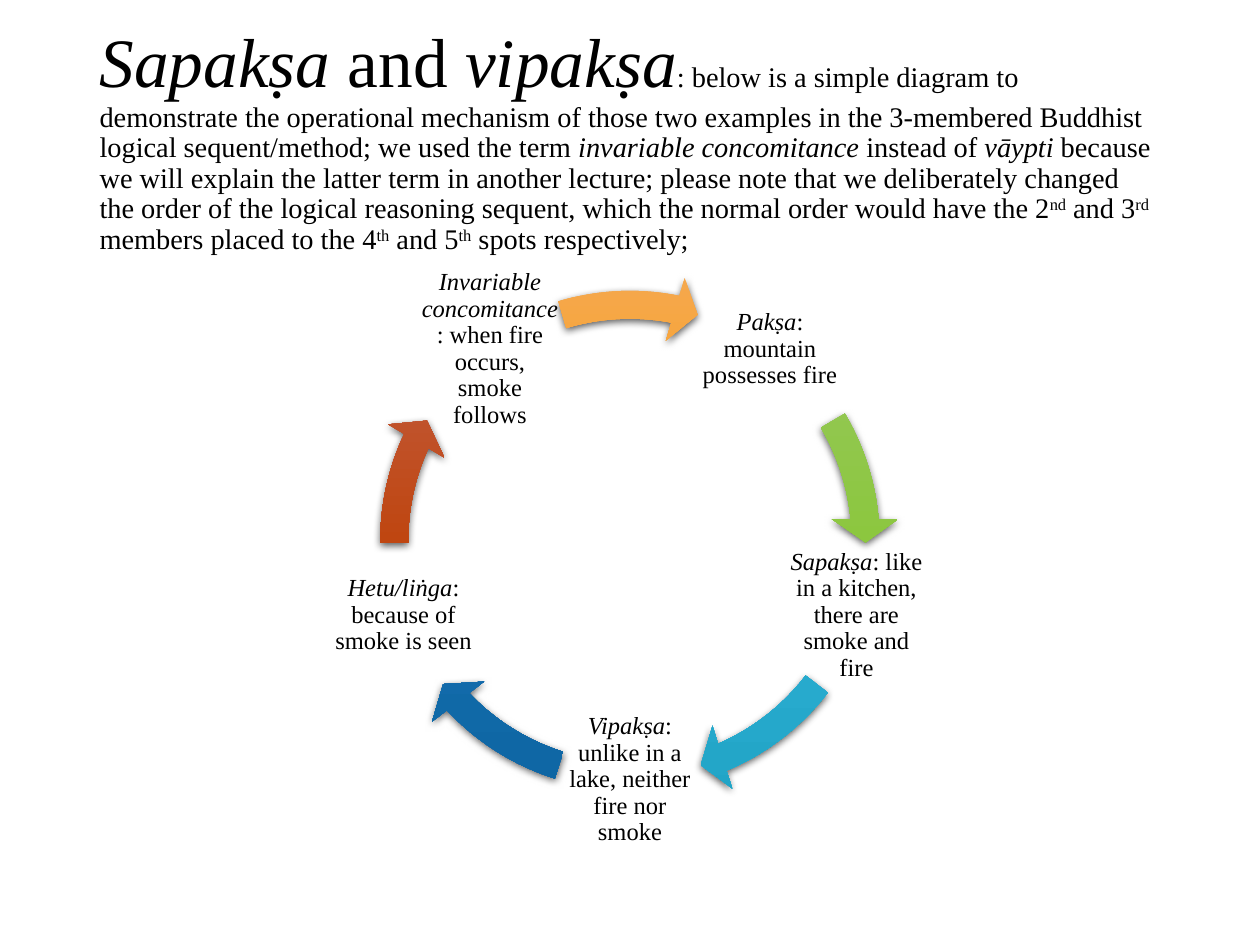
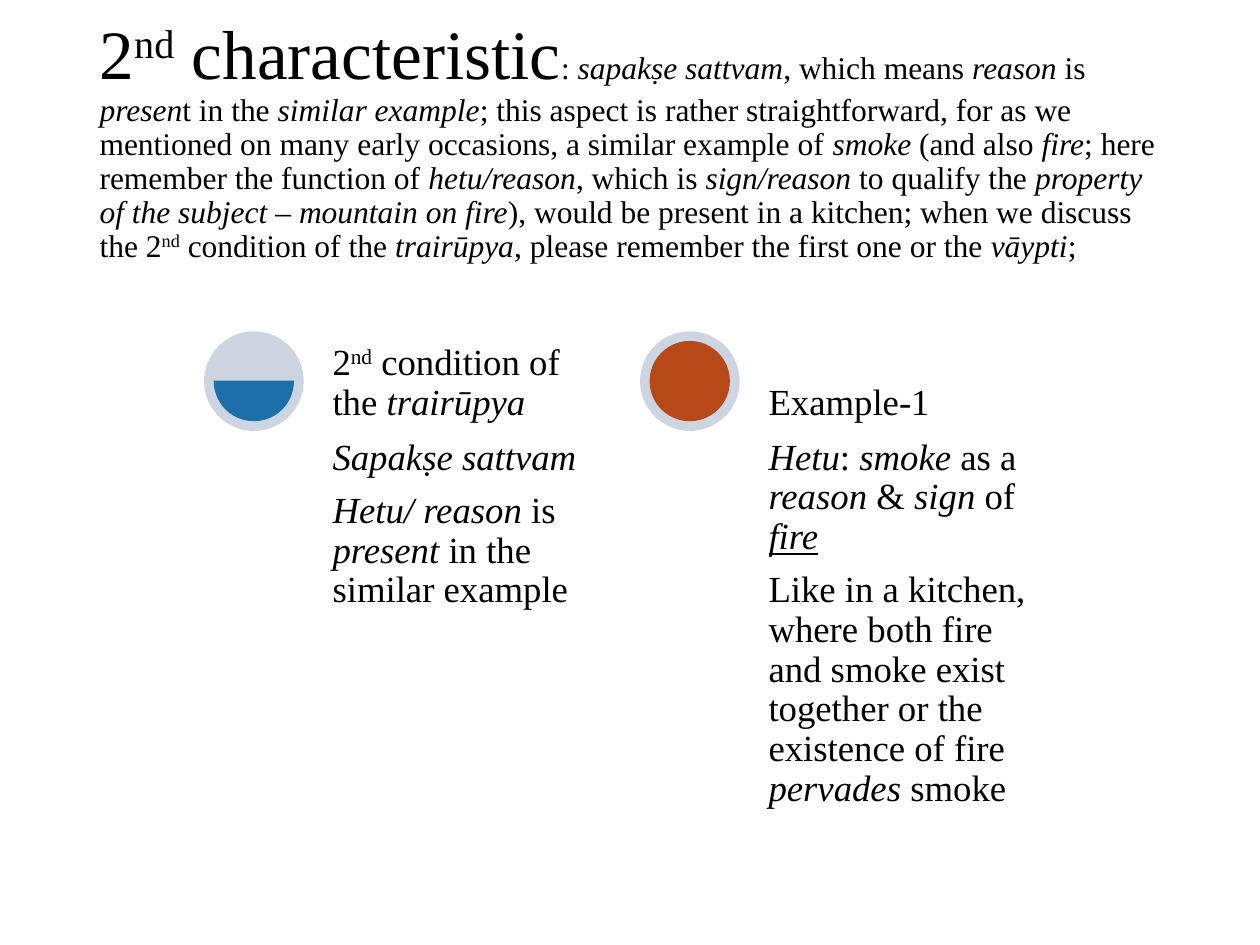
import copy
import math

import pptx
import pptx.dml.color
import pptx.enum.shapes
import pptx.enum.text
import pptx.oxml
import pptx.oxml.ns
import pptx.util

RGBColor = pptx.dml.color.RGBColor
MSO_SHAPE = pptx.enum.shapes.MSO_SHAPE
ANCHOR = pptx.enum.text.MSO_ANCHOR
ALIGN = pptx.enum.text.PP_ALIGN
qn = pptx.oxml.ns.qn

# Shared style
FONT = "Times New Roman"
BLACK = RGBColor(0x00, 0x00, 0x00)
PALE = RGBColor(0xCD, 0xD5, 0xE2)
BLUE = RGBColor(0x1D, 0x6F, 0xA9)
RUST = RGBColor(0xB7, 0x49, 0x19)
GREENS = [RGBColor(0x98, 0xC8, 0x62), RGBColor(0x8C, 0xC7, 0x3F), RGBColor(0x7D, 0xB8, 0x31)]
CYANS = [RGBColor(0x59, 0xB8, 0xD4), RGBColor(0x2E, 0xB3, 0xD6), RGBColor(0x21, 0xA4, 0xC6)]
BLUES = [RGBColor(0x4E, 0x80, 0xB5), RGBColor(0x16, 0x70, 0xB0), RGBColor(0x0D, 0x65, 0xA3)]
RUSTS = [RGBColor(0xC2, 0x63, 0x4D), RGBColor(0xBF, 0x46, 0x11), RGBColor(0xB1, 0x3B, 0x08)]
ORANGES = [RGBColor(0xF5, 0xA8, 0x4E), RGBColor(0xFC, 0x9F, 0x0E), RGBColor(0xE5, 0x8F, 0x07)]

COLS, ROWS = 100, 75  # grid of the slide
HEAD_SIZE = 39.6
SHADOW = (
    '<a:outerShdw xmlns:a="http://schemas.openxmlformats.org/drawingml/2006/main" '
    'blurRad="57150" dist="19050" dir="5400000" algn="ctr" rotWithShape="0">'
    '<a:srgbClr val="000000"><a:alpha val="63000"/></a:srgbClr></a:outerShdw>'
)


class Deck:
    """Holds the style and the current slide."""

    def __init__(self):
        self.prs = pptx.Presentation()
        self.prs.slide_width = pptx.util.Inches(10)
        self.prs.slide_height = pptx.util.Inches(7.5)
        self.s = None

    def box(self, col, row, cols, rows):
        dx, dy = self.prs.slide_width / COLS, self.prs.slide_height / ROWS
        return [round(v) for v in (col * dx, row * dy, cols * dx, rows * dy)]

    def add_runs(self, p, text, size):
        """Add runs; * toggles italic, ^ superscript and _ underline."""
        for i, slanted in enumerate(text.split("*")):
            for j, raised in enumerate(slanted.split("^")):
                for k, part in enumerate(raised.split("_")):
                    if not part:
                        continue
                    r = p.add_run()
                    r.text = part
                    r.font.name = FONT
                    r.font.size = pptx.util.Pt(size)
                    r.font.color.rgb = BLACK
                    r.font.italic = i % 2 == 1
                    if j % 2:
                        r.font._element.set("baseline", "30000")
                    if k % 2:
                        r.font.underline = True

    def slide(self, head, body, size):
        """Start a slide with a large title that runs on into body text."""
        self.s = self.prs.slides.add_slide(self.prs.slide_layouts[5])
        title = self.s.shapes.title
        title.left, title.top, title.width, title.height = self.box(6.9, 4, 86.2, 14.5)
        tf = title.text_frame
        tf.word_wrap = True
        tf.auto_size = pptx.enum.text.MSO_AUTO_SIZE.NONE
        tf.vertical_anchor = ANCHOR.MIDDLE
        p = tf.paragraphs[0]
        p.alignment = ALIGN.LEFT
        p.line_spacing = 0.9
        self.add_runs(p, head, HEAD_SIZE)
        self.add_runs(p, body, size)

    def text(self, at, paragraphs, size, inset, anchor=ANCHOR.TOP, align=ALIGN.LEFT):
        tf = self.s.shapes.add_textbox(*self.box(*at)).text_frame
        tf.word_wrap = True
        tf.vertical_anchor = anchor
        tf.margin_left = tf.margin_right = pptx.util.Inches(inset)
        tf.margin_top = tf.margin_bottom = pptx.util.Inches(inset)
        for i, text in enumerate(paragraphs):
            p = tf.add_paragraph() if i else tf.paragraphs[0]
            p.alignment = align
            p.line_spacing = 0.9
            p.space_after = pptx.util.Pt(round(size * 0.37, 1))
            self.add_runs(p, text, size)

    def shape(self, kind, at, adjustments=()):
        sp = self.s.shapes.add_shape(kind, *self.box(*at))
        sp.shadow.inherit = False
        sp.line.fill.background()
        for i, value in enumerate(adjustments):
            sp.adjustments[i] = value
        return sp

    def solid(self, kind, at, color, adjustments=(), outlined=False):
        sp = self.shape(kind, at, adjustments)
        sp.fill.solid()
        sp.fill.fore_color.rgb = color
        if outlined:
            sp.line.color.rgb = color
            sp.line.width = pptx.util.Pt(0.5)

    def ring_arrow(self, at, start, end, colors):
        """Curved arrow between two angles in degrees, shaded top to bottom."""
        adjustments = (0.052, 5.6 * 0.6, end * 0.6, start * 0.6, 0.061)
        sp = self.shape(MSO_SHAPE.CIRCULAR_ARROW, at, adjustments)
        sp.fill.gradient()
        sp.fill.gradient_angle = 270
        spPr = sp.element.spPr
        stops = spPr.find(".//" + qn("a:gsLst"))
        stops.insert(1, copy.deepcopy(stops[0]))
        for i, (stop, color) in enumerate(zip(sp.fill.gradient_stops, colors)):
            stop.position = i / 2
            stop.color.rgb = color
        spPr.find(qn("a:effectLst")).append(pptx.oxml.parse_xml(SHADOW))


def cycle_slide(deck):
    deck.slide(
        "*Sapakṣa* and *vipakṣa*",
        ": below is a simple diagram to demonstrate the operational mechanism of those two "
        "examples in the 3-membered Buddhist logical sequent/method; we used the term "
        "*invariable concomitance* instead of *vāypti* because we will explain the latter term "
        "in another lecture; please note that we deliberately changed the order of the logical "
        "reasoning sequent, which the normal order would have the 2^nd^ and 3^rd^ members "
        "placed to the 4^th^ and 5^th^ spots respectively;",
        16.2,
    )
    # Five steps on a circle, each followed by its arrow (start and end angle)
    steps = [
        ("*Pakṣa*: mountain possesses fire", 329.44, 354.88, GREENS),
        ("*Sapakṣa*: like in a kitchen, there are smoke and fire", 37.56, 66.91, CYANS),
        ("*Vipakṣa*: unlike in a lake, neither fire nor smoke", 107.5, 136.84, BLUES),
        ("*Hetu/liṅga*: because of smoke is seen", 179.52, 204.96, RUSTS),
        ("*Invariable concomitance*: when fire occurs, smoke follows", 253.31, 281.09, ORANGES),
    ]
    center_col, center_row, radius, side, ring = 50, 43, 18.9, 11.4, 42.6
    ring_at = (center_col - ring / 2, 21.6, ring, ring)
    for i, (label, start, end, colors) in enumerate(steps):
        angle = math.radians(-54 + i * 360 / len(steps))
        col = center_col + radius * math.cos(angle) - side / 2
        row = center_row + radius * math.sin(angle) - side / 2
        deck.text((col, row, side, side), [label], 14, 0.02, ANCHOR.MIDDLE, ALIGN.CENTER)
        deck.ring_arrow(ring_at, start, end, colors)


def characteristic_slide(deck):
    deck.slide(
        "2^nd^ characteristic",
        ": *sapakṣe sattvam*, which means *reason* is *presen*t in the *similar example*; this "
        "aspect is rather straightforward, for as we mentioned on many early occasions, a "
        "similar example of *smoke* (and also *fire*; here remember the function of "
        "*hetu/reason*, which is *sign/reason* to qualify the *property of the subject* – "
        "*mountain on fire*), would be present in a kitchen; when we discuss the 2^nd^ "
        "condition of the *trairūpya*, please remember the first one or the *vāypti*;",
        18,
    )
    # Two columns: badge filled between two angles, heading and body
    columns = [
        (BLUE, 0, 180, "2^nd^ condition of the *trairūpya*",
         ["*Sapakṣe sattvam*", "*Hetu/ reason* is *present* in the similar example"]),
        (RUST, 270, 270, "Example-1",
         ["*Hetu*: *smoke* as a *reason* & *sign* of *_fire_*",
          "Like in a kitchen, where both fire and smoke exist together or the existence "
          "of fire *pervades* smoke"]),
    ]
    top, badge, rim, width, pitch = 26.3, 7.9, 0.8, 23.4, 34.6
    for i, (color, start, end, heading, body) in enumerate(columns):
        left = 16.2 + i * pitch
        text_left = left + 9.6
        core = badge - 2 * rim
        deck.solid(MSO_SHAPE.OVAL, (left, top, badge, badge), PALE)
        deck.solid(MSO_SHAPE.CHORD, (left + rim, top + rim, core, core), color,
                   (start * 0.6, end * 0.6), outlined=True)
        deck.text((text_left, top + badge, width, 33.3), body, 21, 0.06)
        deck.text((text_left, top, width, badge), [heading], 21, 0.06, ANCHOR.BOTTOM)


def main():
    deck = Deck()
    cycle_slide(deck)
    characteristic_slide(deck)
    deck.prs.save("out.pptx")


if __name__ == "__main__":
    main()
